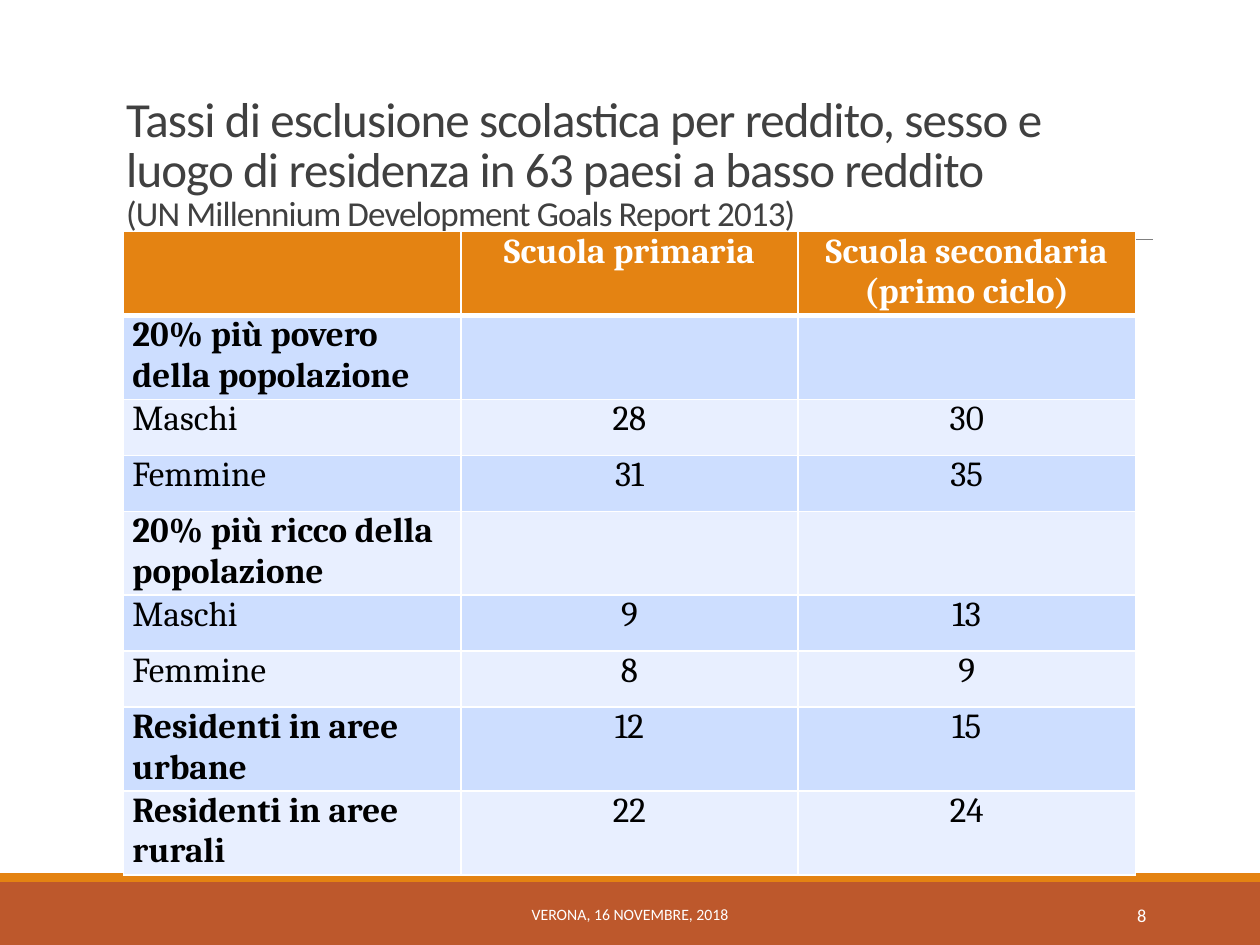
"""Build a slide with a table of school exclusion rates by income, sex and residence."""
from dataclasses import dataclass

from lxml import etree
from pptx import Presentation
from pptx.dml.color import RGBColor
from pptx.enum.shapes import MSO_CONNECTOR, MSO_SHAPE
from pptx.enum.text import MSO_ANCHOR, MSO_AUTO_SIZE, PP_ALIGN
from pptx.oxml.ns import qn
from pptx.util import Cm, Pt

LEFT, CENTER, RIGHT = PP_ALIGN.LEFT, PP_ALIGN.CENTER, PP_ALIGN.RIGHT
TOP, MIDDLE, BOTTOM = MSO_ANCHOR.TOP, MSO_ANCHOR.MIDDLE, MSO_ANCHOR.BOTTOM
RECTANGLE, STRAIGHT = MSO_SHAPE.RECTANGLE, MSO_CONNECTOR.STRAIGHT
NO_FIT = MSO_AUTO_SIZE.NONE
TITLE_ONLY = 5


@dataclass(frozen=True)
class Theme:
    heading_font: str = "Calibri"
    table_font: str = "Cambria"
    white: str = "FFFFFF"
    black: str = "000000"
    title: str = "404040"
    rule: str = "808080"
    orange: str = "E48312"
    rust: str = "BD582C"
    bands: tuple = ("CDDEFF", "E8EFFF")
    title_size: float = 28
    body_size: float = 20
    number_size: float = 10.5
    footer_size: float = 9


theme = Theme()


def write(para, text, size, color, font=theme.heading_font, bold=False, align=LEFT, tracking=0):
    para.alignment = align
    span = para.add_run()
    span.text = text
    span.font.name = font
    span.font.size = Pt(size)
    span.font.bold = bold
    span.font.color.rgb = RGBColor.from_string(color)
    if tracking:
        span.font._element.set("spc", str(int(tracking * 100)))


def set_borders(cell, widths):
    properties = cell._tc.get_or_add_tcPr()
    for index, (side, width) in enumerate(widths.items()):
        line = etree.Element(qn(f"a:ln{side}"), w=str(Pt(width)))
        fill = etree.SubElement(line, qn("a:solidFill"))
        etree.SubElement(fill, qn("a:srgbClr"), val=theme.white)
        properties.insert(index, line)


deck = Presentation()
deck.slide_width, deck.slide_height = Cm(25.4), Cm(19.05)
page = deck.slides.add_slide(deck.slide_layouts[TITLE_ONLY])

for top, height, color in ((17.78, 1.27, theme.rust), (17.6, 0.18, theme.orange)):
    bar = page.shapes.add_shape(RECTANGLE, Cm(0), Cm(top), deck.slide_width, Cm(height))
    bar.shadow.inherit = False
    bar.fill.solid()
    bar.fill.fore_color.rgb = RGBColor.from_string(color)
    bar.line.fill.background()

rule = page.shapes.add_connector(STRAIGHT, Cm(2.49), Cm(4.83), Cm(23.24), Cm(4.83))
rule.line.color.rgb = RGBColor.from_string(theme.rule)
rule.line.width = Pt(0.5)
etree.SubElement(rule._element.spPr, qn("a:effectLst"))

title = page.shapes.title
title.left, title.top, title.width, title.height = Cm(2.29), Cm(0.79), Cm(20.95), Cm(4.04)
title.text_frame.auto_size = NO_FIT
title.text_frame.word_wrap = True
title.text_frame.vertical_anchor = BOTTOM
para = title.text_frame.paragraphs[0]
para.line_spacing = 0.85
write(para, "Tassi di esclusione scolastica per reddito, sesso e luogo di residenza in 63 paesi a basso reddito",
      theme.title_size, theme.title, tracking=-0.5)
para.add_line_break()
write(para, "(UN Millennium Development Goals Report 2013)", theme.body_size, theme.title, tracking=-0.5)

rows = [
    ("", "Scuola primaria", "Scuola secondaria (primo ciclo)"),
    ("20% più povero della popolazione", "", ""),
    ("Maschi", "28", "30"),
    ("Femmine", "31", "35"),
    ("20% più ricco della popolazione", "", ""),
    ("Maschi", "9", "13"),
    ("Femmine", "8", "9"),
    ("Residenti in aree urbane", "12", "15"),
    ("Residenti in aree rurali", "22", "24"),
]
single_line = ("Maschi", "Femmine")
heights = [Cm(1.13 if row[0] in single_line else 1.69) for row in rows]
table = page.shapes.add_table(len(rows), 3, Cm(2.49), Cm(4.67), Cm(20.4), sum(heights)).table

for row_index, row in enumerate(rows):
    table.rows[row_index].height = heights[row_index]
    is_header = row_index == 0
    background = theme.orange if is_header else theme.bands[(row_index - 1) % 2]
    borders = {"L": 1, "R": 1, "T": 3 if row_index == 1 else 1, "B": 3 if is_header else 1}
    for column_index, text in enumerate(row):
        cell = table.cell(row_index, column_index)
        cell.margin_left = cell.margin_right = Cm(0.18)
        cell.margin_top = cell.margin_bottom = Cm(0)
        cell.vertical_anchor = TOP
        cell.fill.solid()
        cell.fill.fore_color.rgb = RGBColor.from_string(background)
        set_borders(cell, borders)
        if text:
            is_label = column_index == 0
            para = cell.text_frame.paragraphs[0]
            para.space_after = Pt(10)
            write(para, text, theme.body_size, theme.white if is_header else theme.black,
                  font=theme.table_font, align=LEFT if is_label else CENTER,
                  bold=is_header or (is_label and text not in single_line))

footers = (
    ("8", 20.62, 2.74, theme.number_size, RIGHT),
    ("VERONA, 16 NOVEMBRE, 2018", 7.67, 10.06, theme.footer_size, CENTER),
)
for text, left, width, size, align in footers:
    box = page.shapes.add_textbox(Cm(left), Cm(17.93), Cm(width), Cm(1.02))
    box.text_frame.word_wrap = True
    box.text_frame.vertical_anchor = MIDDLE
    write(box.text_frame.paragraphs[0], text, size, theme.white, align=align)

deck.save("out.pptx")
